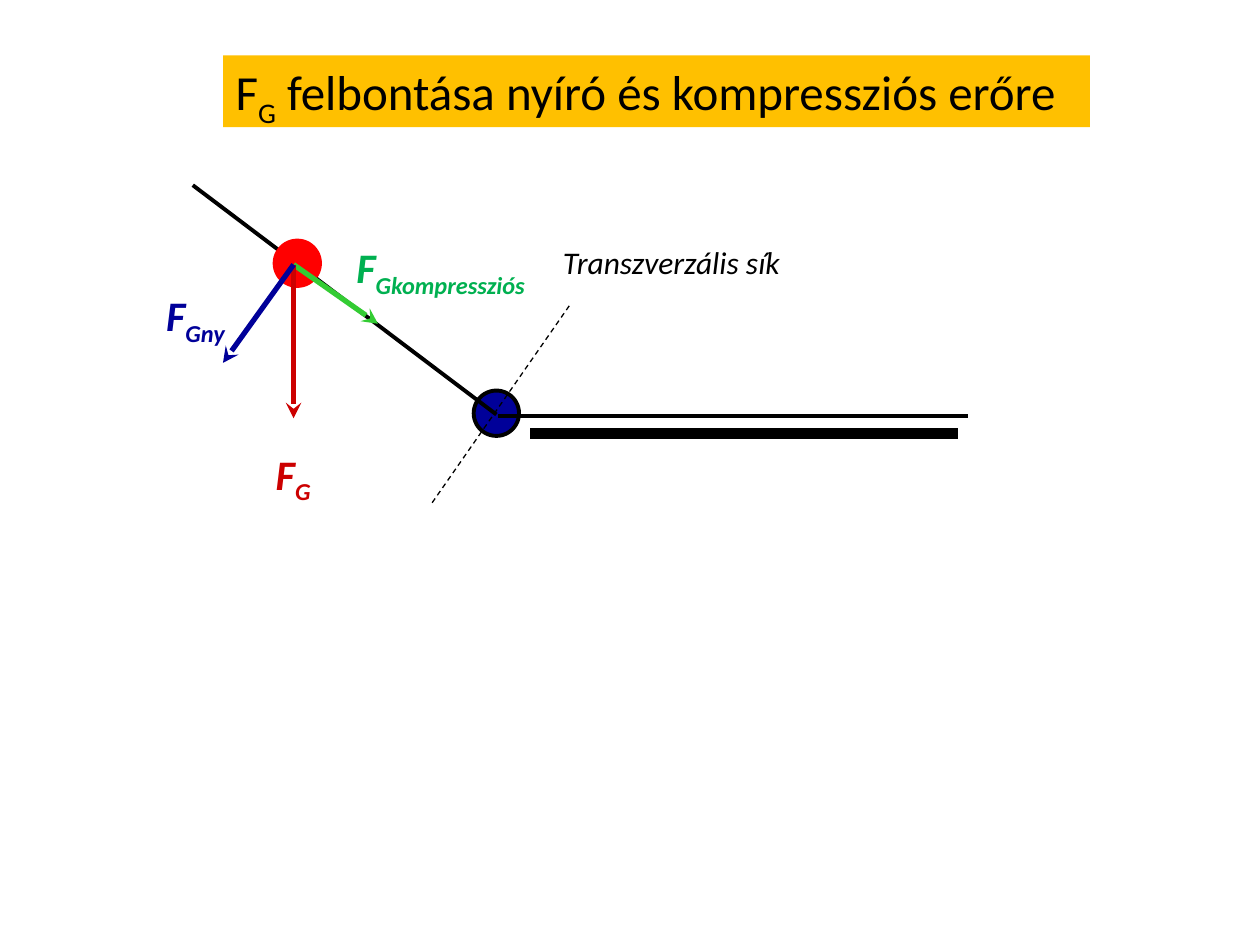
"""Builds a slide resolving the force FG into shear and compression parts."""
from lxml import etree
from pptx import Presentation
from pptx import util as u
from pptx.dml.color import RGBColor
from pptx.enum import dml, shapes, text
from pptx.oxml.ns import qn

COLORS = {"black": "000000", "navy": "000099", "red": "FF0000", "crimson": "CC0000",
          "lime": "33CC33", "green": "00B050", "amber": "FFC000"}
TITLE = [("F", False), ("G", True), (" felbontása nyíró és kompressziós erőre", False)]
TITLE_BOX = (1.77, 0.44, 6.88, 0.57)

MASS, HIP = (2.33, 2.1), (3.94, 3.29)
BODY = [
    ("line", (4.21, 3.44), (7.6, 3.44), "black", 6),
    ("joint", (3.76, 3.1), 0.36, "navy", "black"),
    ("line", HIP, (1.53, 1.47), "black", 2.25),
    ("line", (7.68, 3.3), (3.95, 3.3), "black", 2.25),
    ("joint", (2.18, 1.91), 0.36, "red", "red"),
]
FORCES = [((3, 2.57), "lime"), ((2.33, 3.32), "crimson"), ((1.77, 2.88), "navy")]
PLANE = ((3.43, 3.99), (4.53, 2.41))

FORCE_FONT = {"size": u.Pt(24), "bold": True, "italic": True}
PLANE_FONT = {"size": u.Pt(18), "italic": True}
TITLE_FONT = {"size": u.Pt(28)}
LABELS = [
    ((4.37, 1.88, 2.27, 0.4), [("Transzverzális sík", False)], "black", PLANE_FONT),
    ((2.09, 3.51, 0.63, 0.5), [("F", False), ("G", True)], "crimson", FORCE_FONT),
    ((1.22, 2.25, 0.94, 0.5), [("F", False), ("Gny", True)], "navy", FORCE_FONT),
    ((2.73, 1.87, 1.8, 0.5), [("F", False), ("Gkompressziós", True)], "green", FORCE_FONT),
]


def inches(*lengths):
    return [u.Inches(length) for length in lengths]


def paint(color_format, color):
    color_format.rgb = RGBColor.from_string(COLORS[color])


def add_line(slide, start, end, color, width, arrow=False, dashed=False):
    line = slide.shapes.add_connector(shapes.MSO_CONNECTOR.STRAIGHT, *inches(*start, *end))
    paint(line.line.color, color)
    line.line.width = u.Pt(width)
    if dashed:
        line.line.dash_style = dml.MSO_LINE.DASH
    if arrow:
        etree.SubElement(line.line._get_or_add_ln(), qn("a:tailEnd"), type="stealth")
    etree.SubElement(line._element.spPr, qn("a:effectLst"))


def add_joint(slide, corner, size, fill, outline):
    joint = slide.shapes.add_shape(shapes.MSO_SHAPE.OVAL, *inches(*corner, size, size))
    joint.shadow.inherit = False
    joint.fill.solid()
    paint(joint.fill.fore_color, fill)
    paint(joint.line.color, outline)
    joint.line.width = u.Pt(2.25)


def write(frame, pieces, color, font_format):
    frame.word_wrap = True
    frame.auto_size = text.MSO_AUTO_SIZE.NONE
    frame.vertical_anchor = text.MSO_ANCHOR.TOP
    paragraph = frame.paragraphs[0]
    paragraph.alignment = text.PP_ALIGN.LEFT
    for words, subscript in pieces:
        run = paragraph.add_run()
        run.text = words
        for name, value in {"name": "Calibri", **font_format}.items():
            setattr(run.font, name, value)
        paint(run.font.color, color)
        if subscript:
            run.font._element.set("baseline", "-25000")


def main():
    deck = Presentation()
    deck.slide_width, deck.slide_height = inches(10, 7.5)
    slide = deck.slides.add_slide(deck.slide_layouts[5])

    title = slide.shapes.title
    title.left, title.top, title.width, title.height = inches(*TITLE_BOX)
    title.fill.solid()
    paint(title.fill.fore_color, "amber")
    write(title.text_frame, TITLE, "black", TITLE_FONT)

    makers = {"line": add_line, "joint": add_joint}
    for kind, *details in BODY:
        makers[kind](slide, *details)
    for tip, color in FORCES:
        add_line(slide, MASS, tip, color, 3, arrow=True)
    add_line(slide, *PLANE, "black", 0.75, dashed=True)
    for box, pieces, color, font_format in LABELS:
        label = slide.shapes.add_textbox(*inches(*box))
        write(label.text_frame, pieces, color, font_format)
    deck.save("out.pptx")


if __name__ == "__main__":
    main()
